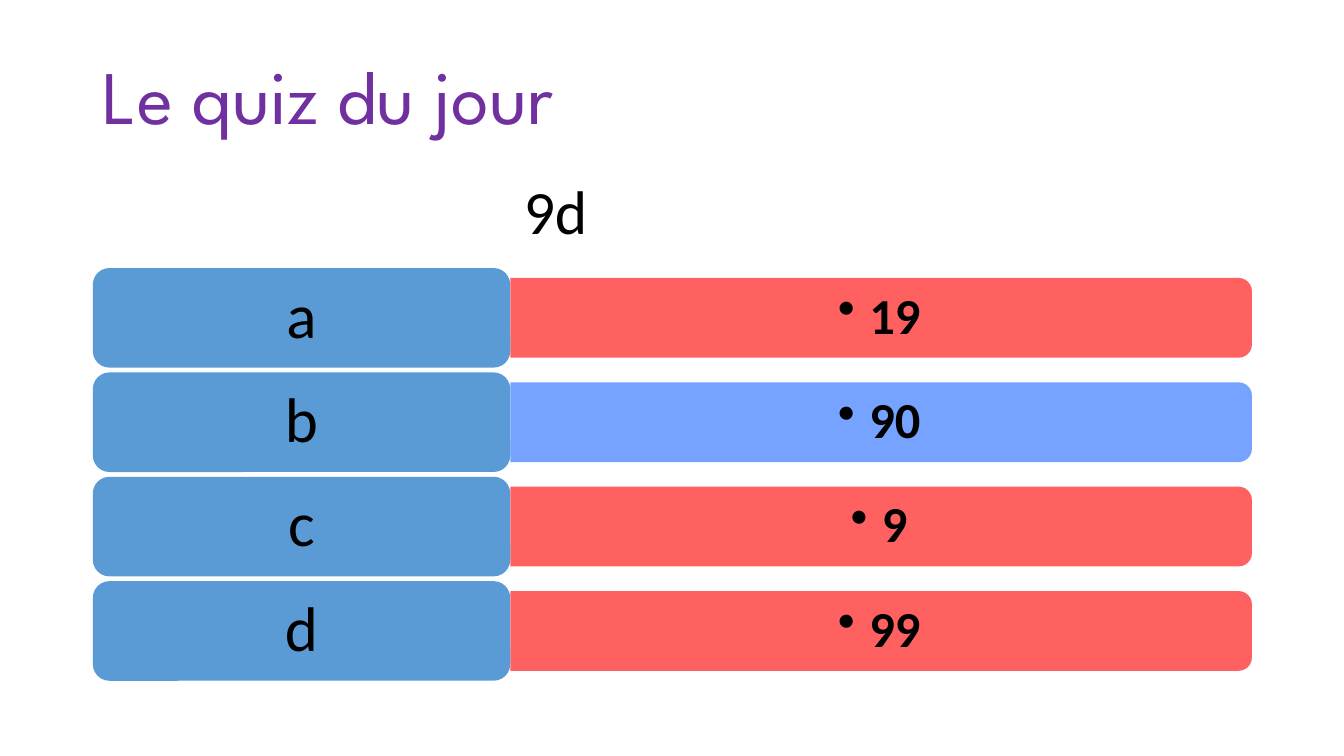
from lxml.etree import SubElement
from pptx import Presentation
from pptx.dml.color import RGBColor
from pptx.enum.shapes import MSO_SHAPE
from pptx.enum.text import MSO_ANCHOR, PP_ALIGN
from pptx.oxml.ns import qn
from pptx.util import Cm, Pt

BLACK, PURPLE, STEEL = "000000", "7030A0", "5B9BD5"
WRONG, RIGHT = "FF5050", "6699FF"
CHOICES = [("a", "19", WRONG), ("b", "90", RIGHT), ("c", "9", WRONG), ("d", "99", WRONG)]

# Row geometry in centimetres
FIRST_CENTRE, ROW_PITCH = 8.01, 2.63
LABEL_LEFT, LABEL_WIDTH, LABEL_HEIGHT = 2.34, 10.52, 2.51
BAR_LEFT, BAR_LENGTH, BAR_HEIGHT = 12.86, 18.69, 2.01
ANSWER_WIDTH, ANSWER_HEIGHT = 18.59, 1.8


def colour(hex_string):
    return RGBColor.from_string(hex_string)


def write(frame, text, size, font="Calibri", hex_string=BLACK, bold=False,
          align=PP_ALIGN.LEFT, spacing=0.9, anchor=MSO_ANCHOR.MIDDLE):
    frame.text = text
    frame.word_wrap = True
    frame.vertical_anchor = anchor
    paragraph = frame.paragraphs[0]
    paragraph.alignment = align
    paragraph.line_spacing = spacing
    style = paragraph.runs[0].font
    style.name, style.size, style.bold = font, Pt(size), bold
    style.color.rgb = colour(hex_string)
    return paragraph


def set_insets(frame, side, edge):
    frame.margin_left = frame.margin_right = Cm(side)
    frame.margin_top = frame.margin_bottom = Cm(edge)


def add_filled(slide, kind, left, top, width, height, hex_string):
    filled = slide.shapes.add_shape(kind, Cm(left), Cm(top), Cm(width), Cm(height))
    filled.shadow.inherit = False
    filled.fill.solid()
    filled.fill.fore_color.rgb = colour(hex_string)
    filled.line.fill.background()
    return filled


def add_bullet(paragraph):
    properties = paragraph._p.get_or_add_pPr()
    properties.set("marL", str(Cm(0.79)))
    properties.set("indent", str(-Cm(0.79)))
    SubElement(properties, qn("a:buChar")).set("char", "•")


def add_bar(slide, centre, hex_string):
    # An upright shape turned a quarter, so its rounded end points right
    bar = add_filled(slide, MSO_SHAPE.ROUND_2_SAME_RECTANGLE,
                     BAR_LEFT + (BAR_LENGTH - BAR_HEIGHT) / 2, centre - BAR_LENGTH / 2,
                     BAR_HEIGHT, BAR_LENGTH, hex_string)
    bar.rotation = 90
    tint = bar.fill._xPr.find(qn("a:solidFill"))[0]
    SubElement(tint, qn("a:alpha")).set("val", "90000")


def add_answer(slide, centre, text):
    answer = slide.shapes.add_textbox(Cm(BAR_LEFT), Cm(centre - ANSWER_HEIGHT / 2),
                                      Cm(ANSWER_WIDTH), Cm(ANSWER_HEIGHT)).text_frame
    set_insets(answer, 0.38, 0.18)
    add_bullet(write(answer, text, 36, bold=True, align=PP_ALIGN.CENTER))


def add_label(slide, centre, letter):
    label = add_filled(slide, MSO_SHAPE.ROUNDED_RECTANGLE, LABEL_LEFT,
                       centre - LABEL_HEIGHT / 2, LABEL_WIDTH, LABEL_HEIGHT, STEEL)
    set_insets(label.text_frame, 0.48, 0.23)
    write(label.text_frame, letter, 45, align=PP_ALIGN.CENTER)


def main():
    quiz = Presentation()
    quiz.slide_width, quiz.slide_height = Cm(33.87), Cm(19.05)
    slide = quiz.slides.add_slide(quiz.slide_layouts[5])

    # Title
    title = slide.shapes.title
    title.left, title.top, title.width, title.height = Cm(2.34), Cm(0.69), Cm(29.21), Cm(3.68)
    write(title.text_frame, "Le quiz du jour", 54, "League Spartan", PURPLE)

    # Choices
    for row, (letter, text, hex_string) in enumerate(CHOICES):
        centre = FIRST_CENTRE + row * ROW_PITCH
        add_bar(slide, centre, hex_string)
        add_answer(slide, centre, text)
        add_label(slide, centre, letter)

    # Question
    question = slide.shapes.add_textbox(Cm(12.95), Cm(4.24), Cm(4.34), Cm(2.13))
    write(question.text_frame, "9d", 44, spacing=1.0, anchor=MSO_ANCHOR.TOP)

    quiz.save("out.pptx")


if __name__ == "__main__":
    main()
